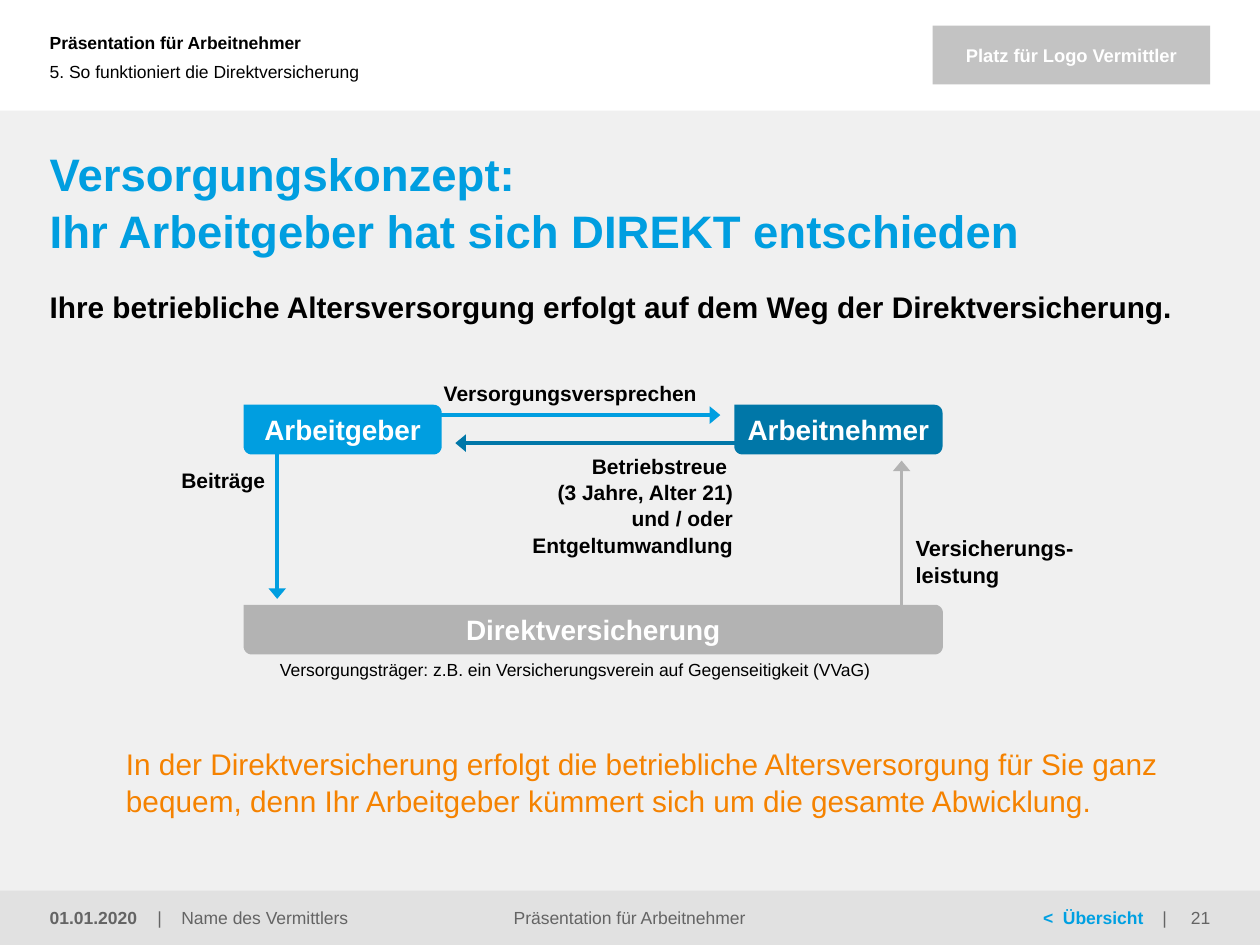
"""Build the slide that explains how the direct insurance works."""
from math import cos, pi, sin

from lxml.etree import SubElement
from pptx import Presentation
from pptx.dml.color import RGBColor
from pptx.enum.shapes import MSO_CONNECTOR as LINE, MSO_SHAPE as SHAPE
from pptx.enum.text import MSO_ANCHOR as ANCHOR, PP_ALIGN as ALIGN
from pptx.oxml.ns import qn
from pptx.util import Pt

rgb = RGBColor.from_string
BLUE, DARK_BLUE, SILVER = "009EE0", "0077A8", "B3B3B3"
BLACK, WHITE, GREY, ORANGE = "000000", "FFFFFF", "646464", "F58200"
TOP, MIDDLE = ANCHOR.TOP, ANCHOR.MIDDLE
LEFT, CENTER, RIGHT = ALIGN.LEFT, ALIGN.CENTER, ALIGN.RIGHT


def paint(shape, colour):
    shape.shadow.inherit = False
    shape.fill.solid()
    shape.fill.fore_color.rgb = rgb(colour)
    shape.line.fill.background()


def write(shape, text, size, colour, bold=False, align=LEFT, anchor=TOP, spacing=1, tabs=()):
    frame = shape.text_frame
    layout = {"word_wrap": True, "vertical_anchor": anchor, "margin_left": 0,
              "margin_right": 0, "margin_top": 0, "margin_bottom": 0}
    for key, value in layout.items():
        setattr(frame, key, value)
    for index, line in enumerate(text.split("\n")):
        paragraph = frame.add_paragraph() if index else frame.paragraphs[0]
        paragraph.alignment, paragraph.line_spacing = align, spacing
        if tabs:
            stops = SubElement(paragraph._p.get_or_add_pPr(), qn("a:tabLst"))
            for stop in tabs:
                SubElement(stops, qn("a:tab"), pos=str(Pt(stop)), algn="l")
        run = paragraph.add_run()
        run.text = line
        for key, value in {"name": "Arial", "size": Pt(size), "bold": bold}.items():
            setattr(run.font, key, value)
        run.font.color.rgb = rgb(colour)
    return frame


deck = Presentation()
deck.slide_width, deck.slide_height = Pt(720), Pt(540)
shapes = deck.slides.add_slide(deck.slide_layouts[6]).shapes

footer_top, footer_height = 509, 31
for left, top, width, height, colour in [
    (0, 63.2, 720, 476.8, "F0F0F0"),
    (0, footer_top, 720, footer_height, "E1E1E1"),
    (533, 14.6, 158.6, 33.6, "C3C3C3"),
]:
    panel = shapes.add_shape(SHAPE.RECTANGLE, Pt(left), Pt(top), Pt(width), Pt(height))
    paint(panel, colour)
write(panel, "Platz für Logo Vermittler", 10.5, WHITE, True, CENTER, MIDDLE)

margin = 28.4
headings = [
    (margin, 0, 470, 48.6, "Präsentation für Arbeitnehmer", 10, BLACK, True, LEFT, MIDDLE),
    (margin, 18, 486, 45.4, "5. So funktioniert die Direktversicherung", 10, BLACK, False,
     LEFT, MIDDLE),
    (margin, 82.2, 664, 62, "Versorgungskonzept:\nIhr Arbeitgeber hat sich DIREKT entschieden",
     26, BLUE, True, LEFT, TOP, 1.04),
    (margin, 164.2, 664, 21,
     "Ihre betriebliche Altersversorgung erfolgt auf dem Weg der Direktversicherung.",
     17, BLACK, True, LEFT, TOP, 1.04),
    (72, 424.8, 620, 43,
     "In der Direktversicherung erfolgt die betriebliche Altersversorgung für Sie ganz "
     "bequem, denn Ihr Arbeitgeber kümmert sich um die gesamte Abwicklung.",
     17, ORANGE, False, LEFT, MIDDLE, 1.04),
]
arrow_labels = [
    (253.6, 217.6, 160, 15, "Versorgungsversprechen", 12, BLACK, True),
    (254.9, 258.6, 164, 59, "Betriebstreue \n(3 Jahre, Alter 21)\nund / oder\nEntgeltumwandlung",
     12, BLACK, True, RIGHT, TOP, 1.04),
    (103.6, 267.2, 52, 15, "Beiträge", 12, BLACK, True),
    (523.2, 304.7, 110, 31, "Versicherungs-\nleistung", 12.5, BLACK, True, LEFT, TOP, 1.04),
    (160, 376.8, 360, 15,
     "Versorgungsträger: z.B. ein Versicherungsverein auf Gegenseitigkeit (VVaG)", 10, BLACK),
]
footer = [
    (margin, 60, "01.01.2020", True, LEFT, GREY, ()),
    (90, 174, "|\tName des Vermittlers", False, LEFT, GREY, (13.7,)),
    (211, 297.4, "Präsentation für Arbeitnehmer", False, CENTER, GREY, ()),
    (596, 60, "<\tÜbersicht", True, LEFT, "00A0E1", (11.4,)),
    (664.2, 8, "|", False, LEFT, GREY, ()),
    (672, 19.6, "21", False, RIGHT, GREY, ()),
]
for left, top, width, height, *wording in headings + arrow_labels:
    write(shapes.add_textbox(Pt(left), Pt(top), Pt(width), Pt(height)), *wording)
for left, width, text, bold, align, colour, tabs in footer:
    entry = shapes.add_textbox(Pt(left), Pt(footer_top), Pt(width), Pt(footer_height))
    write(entry, text, 10, colour, bold, align, MIDDLE, tabs=tabs)

for x1, y1, x2, y2, colour in [
    (424.8, 253.2, 260.2, 253.2, DARK_BLUE),
    (158.4, 242.6, 158.4, 342.2, BLUE),
    (247, 237.2, 411.6, 237.2, BLUE),
    (515.2, 362.2, 515.2, 263.2, SILVER),
]:
    arrow = shapes.add_connector(LINE.STRAIGHT, Pt(x1), Pt(y1), Pt(x2), Pt(y2))
    arrow.line.width, arrow.line.color.rgb = Pt(2), rgb(colour)
    SubElement(arrow.line._get_or_add_ln(), qn("a:tailEnd"), type="triangle", w="lg", len="med")
    SubElement(arrow._element.spPr, qn("a:effectLst"))

party_height, radius, steps = 28.4, 4.6, 8
for left, top, width, party, colour in [
    (139.2, 231.3, 113.2, "Arbeitgeber", BLUE),
    (419.6, 231.3, 119, "Arbeitnehmer", DARK_BLUE),
    (139.2, 345.6, 399.6, "Direktversicherung", SILVER),
]:
    right, bottom = left + width, top + party_height
    corners = [(right - radius, top + radius, -pi / 2),
               (right - radius, bottom - radius, 0),
               (left + radius, bottom - radius, pi / 2)]
    outline = [(Pt(x + radius * cos(start + pi / 2 * step / steps)),
                Pt(y + radius * sin(start + pi / 2 * step / steps)))
               for x, y, start in corners for step in range(steps + 1)]
    builder = shapes.build_freeform(Pt(left), Pt(top))
    builder.add_line_segments(outline, close=True)
    box = builder.convert_to_shape()
    paint(box, colour)
    write(box, party, 16, WHITE, True, CENTER, MIDDLE)

deck.save("out.pptx")
